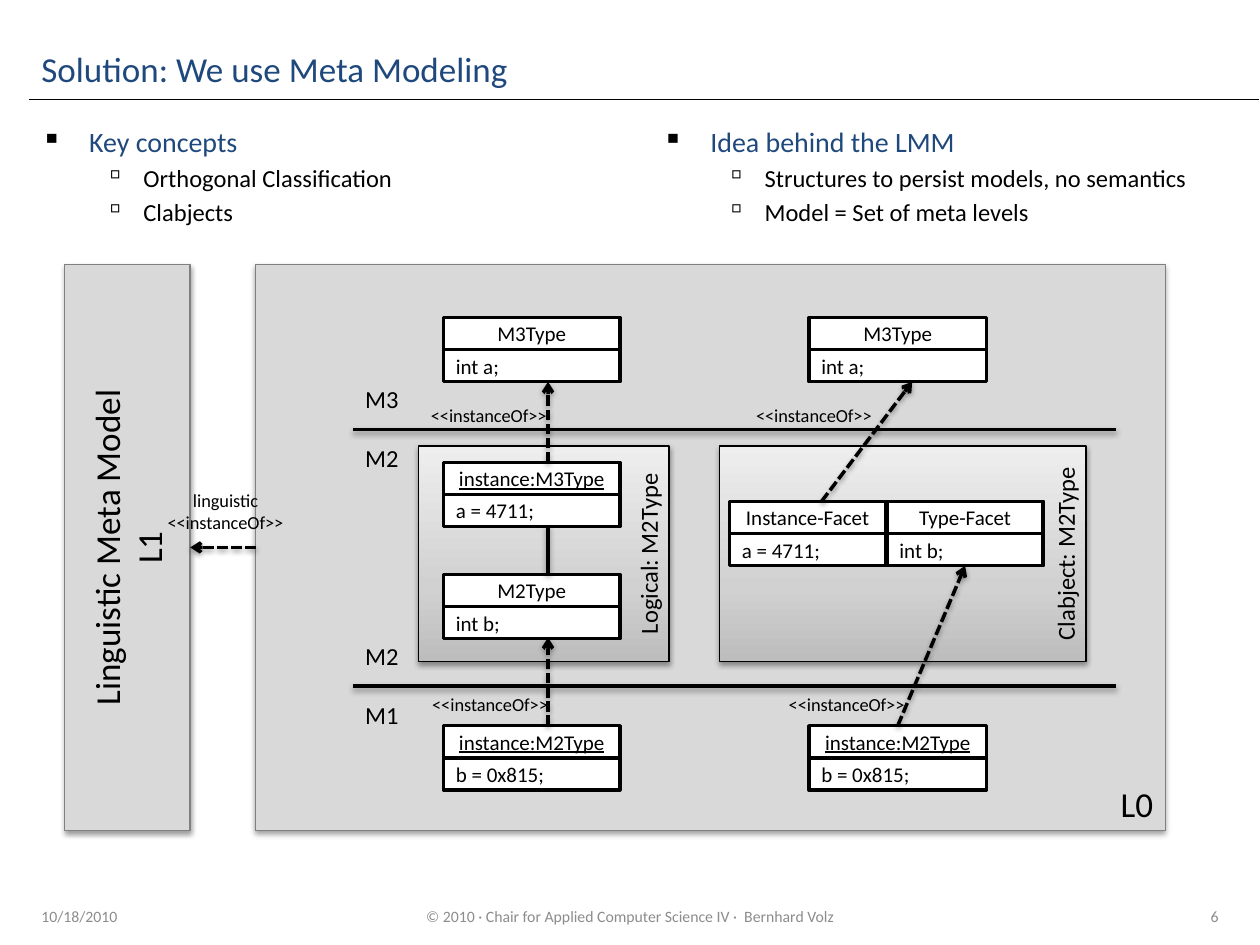
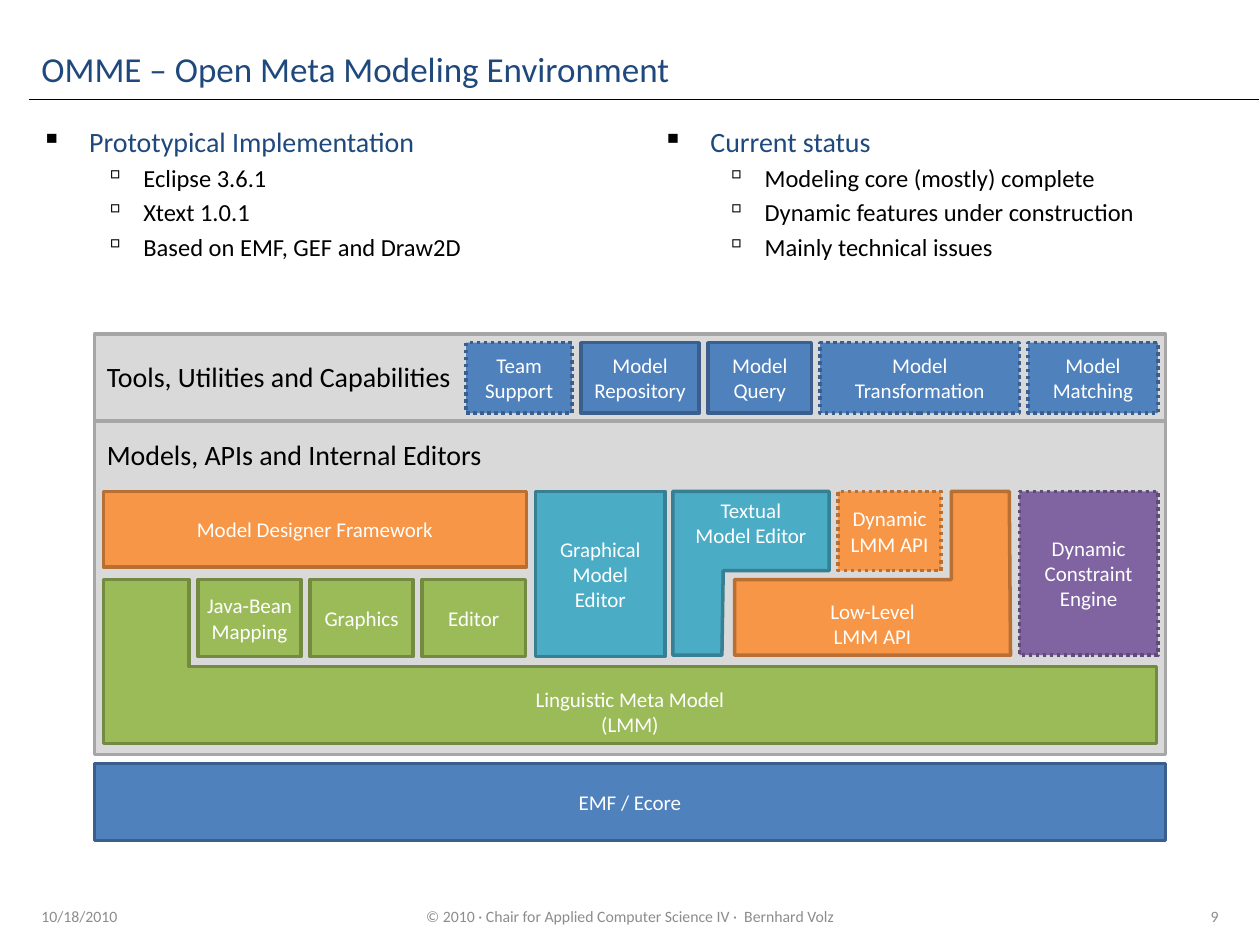
"""Builds two slides on meta modeling: the LMM solution and the OMME architecture."""
from copy import deepcopy
from dataclasses import dataclass

from lxml import etree
from pptx import Presentation
from pptx import util as u
from pptx.dml.color import RGBColor
from pptx.enum import dml, shapes, text
from pptx.oxml import ns

LEFT, CENTER, RIGHT = text.PP_ALIGN.LEFT, text.PP_ALIGN.CENTER, text.PP_ALIGN.RIGHT
TOP, MIDDLE, BOTTOM = text.MSO_ANCHOR.TOP, text.MSO_ANCHOR.MIDDLE, text.MSO_ANCHOR.BOTTOM
DASHED, DOTTED = dml.MSO_LINE.SQUARE_DOT, dml.MSO_LINE.ROUND_DOT
SITE_TOP, SITE_LEFT, SITE_BOTTOM, SITE_RIGHT = range(4)


@dataclass(frozen=True)
class Theme:
    font: str = "Calibri"
    black: str = "000000"
    white: str = "FFFFFF"
    heading: str = "1F497D"
    footer: str = "8C8C8C"
    panel: str = "D9D9D9"
    panel_edge: str = "808080"
    stack_edge: str = "A6A6A6"
    gradient: tuple = ((0, "BDBDBD"), (0.35, "D1D1D1"), (1, "EEEEEE"))
    blue: tuple = ("4F81BD", "3A5F8C")
    green: tuple = ("9BBB59", "738A42")
    orange: tuple = ("F79646", "B76F34")
    teal: tuple = ("4BACC6", "377F92")
    purple: tuple = ("8064A2", "5F4A78")
    title_size: float = 20
    topic_size: float = 16
    point_size: float = 14
    block_size: float = 12
    link_size: float = 10.5
    footer_size: float = 9
    thin: float = 0.75
    thick: float = 2


THEME = Theme()

FOOTERS = [("10/18/2010", 0.23, 1.3, LEFT),
           ("© 2010 · Chair for Applied Computer Science IV ·  Bernhard Volz", 2.03, 5.94, CENTER)]
COLUMNS = (0.23, 5.16)

SOLUTION = {
    "title": "Solution: We use Meta Modeling", "number": "6",
    "topics": [("Key concepts", ["Orthogonal Classification", "Clabjects"]),
               ("Idea behind the LMM", ["Structures to persist models, no semantics",
                                        "Model = Set of meta levels"])],
}
OMME = {
    "title": "OMME – Open Meta Modeling Environment", "number": "9",
    "topics": [("Prototypical Implementation", ["Eclipse 3.6.1", "Xtext 1.0.1",
                                                "Based on EMF, GEF and Draw2D"]),
               ("Current status", ["Modeling core (mostly) complete",
                                   "Dynamic features under construction",
                                   "Mainly technical issues"])],
}

LEVELS = {"L0": ("L0", (2.03, 2.1, 7.22, 4.49), RIGHT, BOTTOM, False),
          "L1": ("Linguistic Meta Model\nL1", (0.51, 2.1, 1, 4.49), CENTER, MIDDLE, True)}
VIEWS = [("Logical: M2Type", (3.32, 3.54, 1.99, 1.71)),
         ("Clabject: M2Type", (5.71, 3.54, 2.91, 1.71))]
BORDERS = [("M3\nM2", 3.41, 3), ("M2\nM1", 5.445, 5.04)]
CLASS_HEIGHT = 0.51
CLASSES = {
    "logical M3": ("M3Type", "int a;", 3.52, 2.52, 1.4),
    "logical facet": ("instance:M3Type", "a = 4711;", 3.52, 3.67, 1.4),
    "logical M2": ("M2Type", "int b;", 3.52, 4.56, 1.4),
    "logical M1": ("instance:M2Type", "b = 0x815;", 3.52, 5.76, 1.4),
    "clabject M3": ("M3Type", "int a;", 6.42, 2.52, 1.41),
    "instance facet": ("Instance-Facet", "a = 4711;", 5.79, 3.98, 1.24),
    "type facet": ("Type-Facet", "int b;", 7.04, 3.98, 1.24),
    "clabject M1": ("instance:M2Type", "b = 0x815;", 6.42, 5.76, 1.41),
}
INSTANCE_ARROWS = [((4.35, 3.67), (4.35, 3.03)), ((4.35, 5.76), (4.35, 5.06)),
                   ((6.52, 3.98), (7.24, 3.03))]
LINK_LABELS = [("<<instanceOf>>", 3.31, 3.16, 0.28), ("<<instanceOf>>", 3.32, 5.45, 0.28),
               ("<<instanceOf>>", 5.89, 3.16, 0.28), ("<<instanceOf>>", 6.15, 5.45, 0.28),
               ("linguistic\n<<instanceOf>>", 1.22, 3.83, 0.45)]

GAP = 0.07
TOOLS = [("Team Support", 0.84, DOTTED), ("Model Repository", 0.94, None),
         ("Model\nQuery", 0.82, None), ("Model Transformation", 1.58, DOTTED),
         ("Model Matching", 1.03, DOTTED)]
MAPPERS = [("Java-Bean Mapping", 0.82, None), ("Graphics", 0.82, None), ("Editor", 0.82, None)]
BLOCKS = [("EMF / Ecore", (0.75, 6.06, 8.5, 0.61), THEME.blue, None),
          ("Dynamic LMM API", (6.65, 3.9, 0.82, 0.63), THEME.orange, DOTTED),
          ("Graphical Model Editor", (4.25, 3.9, 1.03, 1.31), THEME.teal, None),
          ("Model Designer Framework", (0.82, 3.9, 3.36, 0.6), THEME.orange, None),
          ("Dynamic Constraint Engine", (8.09, 3.9, 1.1, 1.3), THEME.purple, DOTTED)]
OUTLINES = [
    ("Linguistic Meta Model\n(LMM)", THEME.green, BOTTOM,
     [(0.82, 4.6), (1.5, 4.6), (1.5, 5.29), (9.18, 5.29), (9.18, 5.9), (0.82, 5.9)]),
    ("Low-Level\nLMM API", THEME.orange, BOTTOM,
     [(5.83, 4.6), (7.55, 4.6), (7.55, 3.9), (8.01, 3.9), (8.02, 5.2), (5.83, 5.2)]),
    ("Textual\nModel Editor", THEME.teal, TOP,
     [(5.34, 3.9), (6.58, 3.9), (6.58, 4.53), (5.74, 4.53), (5.73, 5.2), (5.34, 5.2)]),
]


def rgb(color):
    return RGBColor.from_string(color)


def inches(values):
    return [u.Inches(value) for value in values]


def add_xml(parent, tag, **attributes):
    return etree.SubElement(parent, ns.qn(tag), attributes)


def write(box, words, size, color=THEME.black, align=LEFT, anchor=TOP, wrap=True, upward=False):
    frame = box.text_frame
    frame.text = words
    frame.word_wrap = wrap
    frame.vertical_anchor = anchor
    if upward:
        frame._txBody.find(ns.qn("a:bodyPr")).set("vert", "vert270")
    for para in frame.paragraphs:
        para.alignment = align
        style(para, size, color)
    return box


def style(para, size, color):
    for span in para.runs:
        span.font.name = THEME.font
        span.font.size = u.Pt(size)
        span.font.color.rgb = rgb(color)


def add_label(page, words, place, size, **options):
    return write(page.shapes.add_textbox(*inches(place)), words, size, **options)


def paint(shape, fill, edge, width=THEME.thick, dash=None):
    shape.shadow.inherit = False
    shape.fill.solid()
    shape.fill.fore_color.rgb = rgb(fill)
    draw_edge(shape.line, edge, width, dash)
    return shape


def draw_edge(line, color, width, dash):
    line.color.rgb = rgb(color)
    line.width = u.Pt(width)
    if dash is not None:
        line.dash_style = dash


def add_rect(page, place, fill, edge, width=THEME.thick, dash=None):
    rect = page.shapes.add_shape(shapes.MSO_SHAPE.RECTANGLE, *inches(place))
    return paint(rect, fill, edge, width, dash)


def cast_shadow(effects):
    shadow = add_xml(effects, "a:outerShdw", blurRad="40000", dist="20000", dir="5400000",
                     rotWithShape="0")
    add_xml(add_xml(shadow, "a:srgbClr", val=THEME.black), "a:alpha", val="38000")


def add_shaded_rect(page, place, edge):
    rect = add_rect(page, place, THEME.panel, edge, THEME.thin)
    cast_shadow(rect._element.spPr.find(ns.qn("a:effectLst")))
    return rect


def add_line(page, start, end, color=THEME.black, width=THEME.thick, dash=None, shaded=True):
    line = page.shapes.add_connector(shapes.MSO_CONNECTOR.STRAIGHT, *inches((*start, *end)))
    draw_edge(line.line, color, width, dash)
    effects = add_xml(line._element.spPr, "a:effectLst")
    if shaded:
        cast_shadow(effects)
    return line


def add_arrow(page, start=(0, 0), end=(0, 0)):
    arrow = add_line(page, start, end, dash=DASHED)
    add_xml(arrow._element.spPr.find(ns.qn("a:ln")), "a:tailEnd", type="arrow")
    return arrow


def join(page, source, source_site, target, target_site):
    arrow = add_arrow(page)
    arrow.begin_connect(source, source_site)
    arrow.end_connect(target, target_site)


def add_bullet(para, mark, margin, hang):
    properties = para._p.get_or_add_pPr()
    properties.set("marL", str(u.Inches(margin)))
    properties.set("indent", str(-u.Inches(hang)))
    add_xml(add_xml(properties, "a:buClr"), "a:srgbClr", val=THEME.black)
    add_xml(properties, "a:buChar", char=mark)


def add_topic(page, left, topic, points):
    box = page.shapes.add_textbox(*inches((left, 0.94, 4.61, 0.54 + 0.27 * len(points))))
    box.text_frame.text = "\n".join([topic, *points])
    box.text_frame.word_wrap = True
    head, *rest = box.text_frame.paragraphs
    add_bullet(head, "▪", 0.38, 0.38)
    style(head, THEME.topic_size, THEME.heading)
    for para in rest:
        add_bullet(para, "▫", 0.81, 0.31)
        para.space_before = u.Pt(2.8)
        style(para, THEME.point_size, THEME.black)


def add_page(deck, content):
    page = deck.slides.add_slide(deck.slide_layouts[6])
    add_line(page, (0.23, 0.79), (9.99, 0.79), width=THEME.thin, shaded=False)
    add_label(page, content["title"], (0.23, 0.3, 8.52, 0.48), THEME.title_size,
              color=THEME.heading, anchor=MIDDLE)
    for left, (topic, points) in zip(COLUMNS, content["topics"]):
        add_topic(page, left, topic, points)
    for words, left, width, align in [*FOOTERS, (content["number"], 8.47, 1.3, RIGHT)]:
        add_label(page, words, (left, 7.19, width, 0.16), THEME.footer_size,
                  color=THEME.footer, align=align, anchor=MIDDLE)
    return page


def add_view(page, words, place):
    view = add_shaded_rect(page, place, THEME.black)
    view.fill.gradient()
    view.fill.gradient_angle = 90
    stops = view._element.spPr.find(".//" + ns.qn("a:gsLst"))
    stops.insert(1, deepcopy(stops[0]))
    for stop, (position, color) in zip(view.fill.gradient_stops, THEME.gradient):
        stop.position = position
        stop.color.rgb = rgb(color)
    write(view, words, THEME.point_size, align=CENTER, anchor=BOTTOM, upward=True)


def add_class(page, name, attribute, left, top, width):
    half = CLASS_HEIGHT / 2
    cells = []
    for row, (words, align) in enumerate([(name, CENTER), (attribute, LEFT)]):
        cell = add_rect(page, (left, top + row * half, width, half), THEME.white, THEME.black)
        cells.append(write(cell, words, THEME.block_size, align=align, anchor=MIDDLE))
    if name.startswith("instance:"):
        cells[0].text_frame.paragraphs[0].runs[0].font.underline = True
    return cells


def build_solution(deck):
    page = add_page(deck, SOLUTION)
    levels = {}
    for key, (words, place, align, anchor, upward) in LEVELS.items():
        levels[key] = write(add_shaded_rect(page, place, THEME.panel_edge), words,
                            THEME.title_size, align=align, anchor=anchor, upward=upward)
    for words, place in VIEWS:
        add_view(page, words, place)
    for words, y, top in BORDERS:
        add_line(page, (2.8, y), (8.86, y))
        label = add_label(page, words, (2.8, top, 0.47, 0.81), THEME.point_size, wrap=False)
        label.text_frame.paragraphs[1].space_before = u.Pt(17)
    classes = {key: add_class(page, *parts) for key, parts in CLASSES.items()}
    for start, end in INSTANCE_ARROWS:
        add_arrow(page, start, end)
    add_line(page, (4.35, 4.17), (4.35, 4.56))
    join(page, classes["clabject M1"][0], SITE_TOP, classes["type facet"][1], SITE_BOTTOM)
    join(page, levels["L0"], SITE_LEFT, levels["L1"], SITE_RIGHT)
    for words, left, top, height in LINK_LABELS:
        add_label(page, words, (left, top, 1.14, height), THEME.link_size, align=CENTER, wrap=False)


def add_block(page, words, place, colors, dash):
    block = add_rect(page, place, *colors, dash=dash)
    return write(block, words, THEME.block_size, THEME.white, CENTER, MIDDLE)


def add_row(page, items, left, top, height, colors):
    for words, width, dash in items:
        block = add_block(page, words, (left, top, width, height), colors, dash)
        if colors == THEME.green:
            block.text_frame.margin_left = block.text_frame.margin_right = u.Inches(0.04)
        left += width + GAP


def add_outline(page, words, colors, anchor, points):
    start, *others = [inches(point) for point in points]
    builder = page.shapes.build_freeform(*start)
    builder.add_line_segments(others, close=True)
    outline = paint(builder.convert_to_shape(), *colors)
    write(outline, words, THEME.block_size, THEME.white, CENTER, anchor)


def build_omme(deck):
    page = add_page(deck, OMME)
    stack = add_rect(page, (0.75, 2.65, 8.5, 3.34), THEME.panel, THEME.stack_edge)
    write(stack, "Tools, Utilities and Capabilities\nModels, APIs and Internal Editors",
          THEME.topic_size)
    stack.text_frame.margin_top = u.Inches(0.2)
    stack.text_frame.paragraphs[1].space_before = u.Pt(25.6)
    add_line(page, (0.75, 3.34), (9.25, 3.34), THEME.stack_edge, shaded=False)
    for outline in OUTLINES:
        add_outline(page, *outline)
    for block in BLOCKS:
        add_block(page, *block)
    add_row(page, TOOLS, 3.7, 2.72, 0.56, THEME.blue)
    add_row(page, MAPPERS, 1.57, 4.6, 0.61, THEME.green)


def main():
    deck = Presentation()
    deck.slide_width, deck.slide_height = inches((10, 7.5))
    build_solution(deck)
    build_omme(deck)
    deck.save("out.pptx")


if __name__ == "__main__":
    main()
